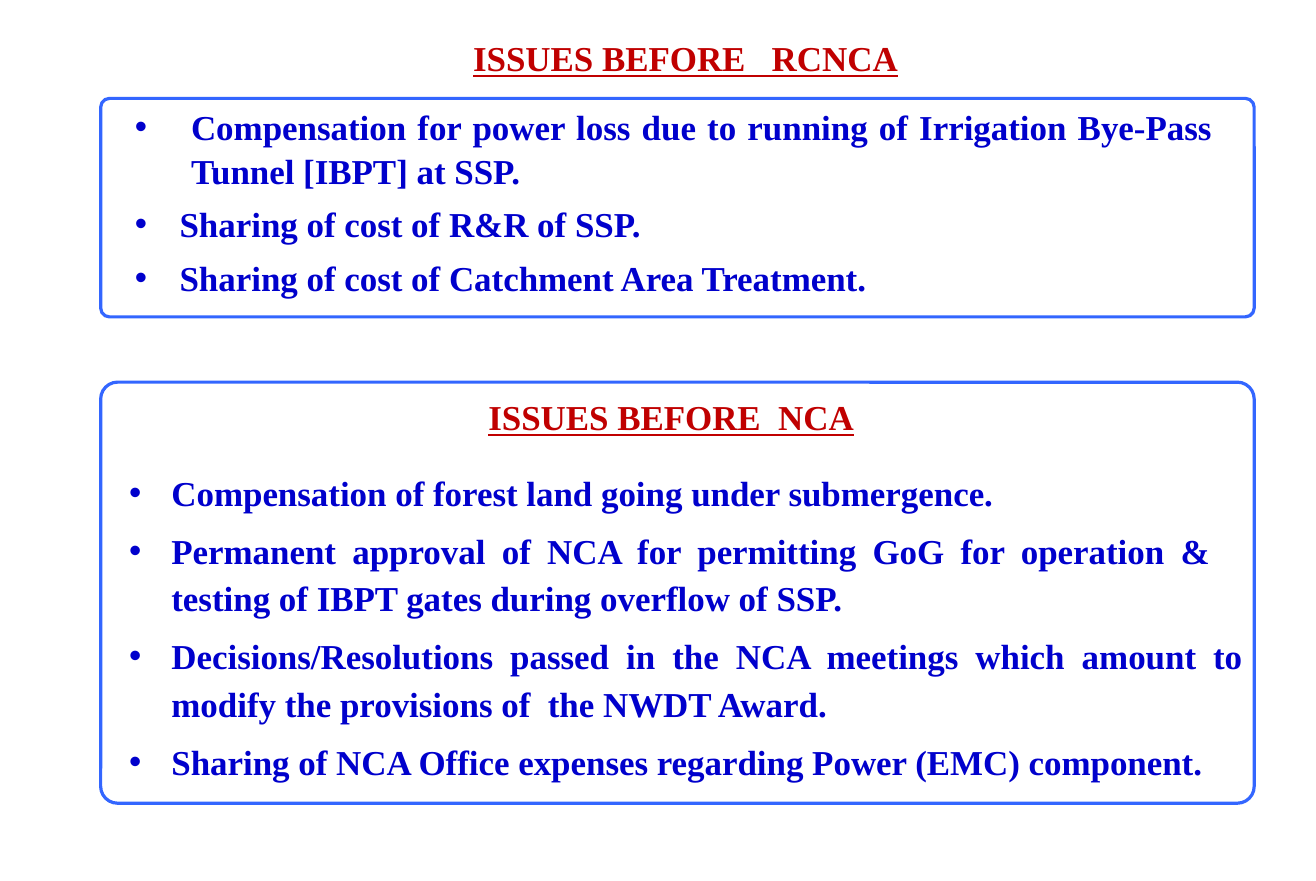
import pptx
import pptx.dml.color
import pptx.enum.shapes
import pptx.enum.text
import pptx.oxml.ns
import pptx.util
import lxml.etree

PX = 9144
FONT_NAME = "Times New Roman"
HEADING_RED = pptx.dml.color.RGBColor(0xC0, 0x00, 0x00)
ISSUE_BLUE = pptx.dml.color.RGBColor(0x00, 0x00, 0xCC)
OUTLINE_BLUE = pptx.dml.color.RGBColor(0x33, 0x66, 0xFF)

HEADING_FONT = {"name": FONT_NAME, "size": pptx.util.Pt(22), "bold": True, "underline": True}
ISSUE_FONT = {"name": FONT_NAME, "size": pptx.util.Pt(22), "bold": True}

RCNCA_PANEL = {
    "box": (88, 86, 1008, 191),
    "heading": "ISSUES BEFORE   RCNCA",
    "heading_box": (22, -74, 978, 77),
    "list_box": (19, 0, 973, 194),
    "inset": 11,
    "line_spacing": 1.04,
    "issues": [
        ("Compensation for power loss due to running of Irrigation Bye-Pass  Tunnel [IBPT] at SSP.", 49),
        ("Sharing of cost of R&R of SSP.", 39),
        ("Sharing of cost of Catchment Area Treatment.", 39),
    ],
}
NCA_PANEL = {
    "box": (88, 334, 1008, 368),
    "heading": "ISSUES BEFORE  NCA",
    "heading_box": (-10, -8, 1017, 77),
    "list_box": (15, 68, 993, 316),
    "inset": 10,
    "line_spacing": 1.14,
    "issues": [
        ("Compensation of forest land going under submergence.", 37),
        ("Permanent approval of NCA for permitting GoG for operation &   testing of IBPT gates during overflow of SSP.", 37),
        ("Decisions/Resolutions passed in the NCA meetings which amount to modify the provisions of  the NWDT Award.", 37),
        ("Sharing of NCA Office expenses regarding Power (EMC) component.", 37),
    ],
}


def set_attributes(target, values):
    for name, value in values.items():
        setattr(target, name, value)


def to_emu(*lengths):
    return [pptx.util.Emu(length * PX) for length in lengths]


def add_text_frame(slide, box, inset, anchor):
    text_frame = slide.shapes.add_textbox(*to_emu(*box)).text_frame
    horizontal, vertical = to_emu(inset, 5)
    set_attributes(text_frame, {
        "word_wrap": True,
        "vertical_anchor": anchor,
        "margin_left": horizontal,
        "margin_right": horizontal,
        "margin_top": vertical,
        "margin_bottom": vertical,
    })
    return text_frame


def add_run(paragraph, text, font_values, color):
    run = paragraph.add_run()
    run.text = text
    set_attributes(run.font, font_values)
    run.font.color.rgb = color


def add_bullet(paragraph, indent):
    properties = paragraph._p.get_or_add_pPr()
    properties.set("marL", str(indent * PX))
    properties.set("indent", str(-indent * PX))
    for tag, name, value in (("a:buFont", "typeface", "Arial"), ("a:buChar", "char", "•")):
        element = lxml.etree.SubElement(properties, pptx.oxml.ns.qn(tag))
        element.set(name, value)


def add_outline(slide, box):
    outline = slide.shapes.add_shape(
        pptx.enum.shapes.MSO_SHAPE.ROUNDED_RECTANGLE, *to_emu(*box))
    outline.adjustments[0] = 0.04
    outline.shadow.inherit = False
    outline.fill.background()
    outline.line.color.rgb = OUTLINE_BLUE
    outline.line.width = pptx.util.Pt(2)


def add_issue_panel(slide, panel):
    left, top = panel["box"][:2]

    def place(offset_left, offset_top, width, height):
        return left + offset_left, top + offset_top, width, height

    add_outline(slide, panel["box"])

    heading_frame = add_text_frame(slide, place(*panel["heading_box"]), panel["inset"],
                                   pptx.enum.text.MSO_ANCHOR.MIDDLE)
    heading = heading_frame.paragraphs[0]
    heading.alignment = pptx.enum.text.PP_ALIGN.CENTER
    add_run(heading, panel["heading"], HEADING_FONT, HEADING_RED)

    list_frame = add_text_frame(slide, place(*panel["list_box"]), panel["inset"],
                                pptx.enum.text.MSO_ANCHOR.TOP)
    for index, (issue, indent) in enumerate(panel["issues"]):
        paragraph = list_frame.add_paragraph() if index else list_frame.paragraphs[0]
        set_attributes(paragraph, {
            "alignment": pptx.enum.text.PP_ALIGN.JUSTIFY,
            "line_spacing": panel["line_spacing"],
            "space_before": pptx.util.Pt(0),
            "space_after": pptx.util.Pt(6.3),
        })
        add_bullet(paragraph, indent)
        add_run(paragraph, issue, ISSUE_FONT, ISSUE_BLUE)


def main():
    presentation = pptx.Presentation()
    presentation.slide_width, presentation.slide_height = to_emu(1150, 770)
    slide = presentation.slides.add_slide(presentation.slide_layouts[6])
    for panel in (RCNCA_PANEL, NCA_PANEL):
        add_issue_panel(slide, panel)
    presentation.save("out.pptx")


if __name__ == "__main__":
    main()
